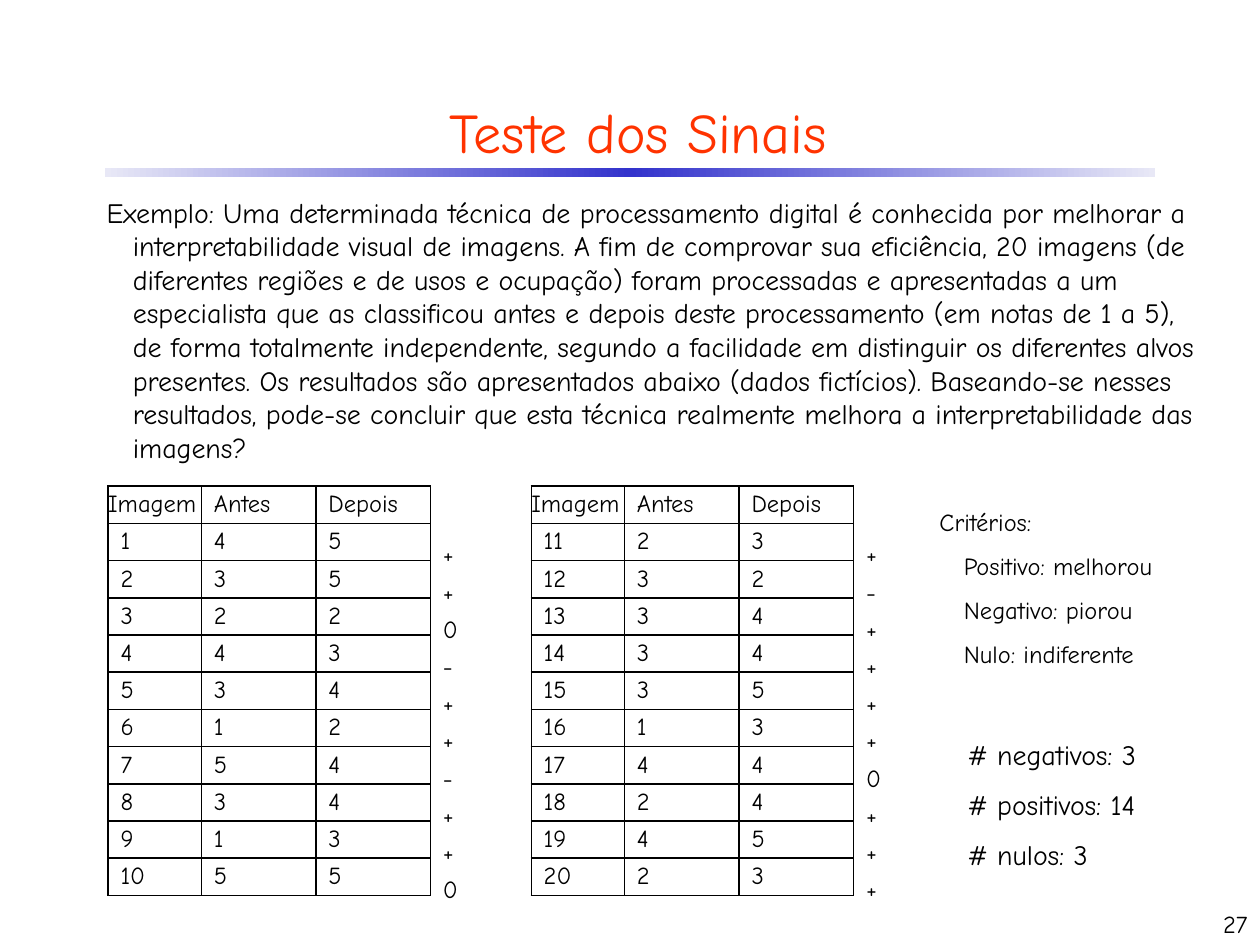
from copy import deepcopy
from dataclasses import dataclass

from lxml.etree import SubElement
from pptx import Presentation
from pptx.dml.color import RGBColor
from pptx.enum.shapes import MSO_SHAPE
from pptx.enum.text import MSO_ANCHOR, PP_ALIGN
from pptx.oxml.ns import qn
from pptx.util import Cm, Pt

FONT = "Comic Neue"
BLACK, WHITE, RED = "000000", "FFFFFF", "FF3300"
PALE, BLUE = "E8E8F6", "3333CC"
PLAIN = "{2D5ABB26-0587-4C30-8999-92F81FD0307C}"
TOP, ROW = 9.8, 0.75
COLS = (1.88, 2.31, 2.31, 1.04)
HEAD = ("Imagem", "Antes", "Depois")
HANG = 0.53


@dataclass
class Line:
    text: str
    left: float = 0
    hang: float = 0


@dataclass
class Note:
    box: tuple
    lines: list
    size: int
    color: str = BLACK
    align: PP_ALIGN = PP_ALIGN.LEFT
    anchor: MSO_ANCHOR = MSO_ANCHOR.TOP
    space: float = 1


@dataclass
class Group:
    left: float
    first: int
    before: str
    after: str
    signs: str


NOTES = [
    Note((0.84, 1.7, 24.05, 1.9), [Line("Teste dos Sinais")], 32, RED,
         PP_ALIGN.CENTER, MSO_ANCHOR.MIDDLE),
    Note((1.9, 3.81, 22.56, 5.74), [Line(
        "Exemplo: Uma determinada técnica de processamento digital é conhecida "
        "por melhorar a interpretabilidade visual de imagens. A fim de comprovar "
        "sua eficiência, 20 imagens (de diferentes regiões e de usos e ocupação) "
        "foram processadas e apresentadas a um especialista que as classificou "
        "antes e depois deste processamento (em notas de 1 a 5), de forma "
        "totalmente independente, segundo a facilidade em distinguir os "
        "diferentes alvos presentes. Os resultados são apresentados abaixo "
        "(dados fictícios). Baseando-se nesses resultados, pode-se concluir que "
        "esta técnica realmente melhora a interpretabilidade das imagens?",
        HANG, HANG)], 16),
    Note((19.25, 14.4, 5.77, 3.33),
         [Line(text, HANG, HANG) for text in
          ("# negativos: 3", "# positivos: 14", "# nulos: 3")], 16, space=1.5),
    Note((18.69, 9.8, 5.77, 3.86),
         [Line("Critérios:", HANG, HANG)] +
         [Line(text, 1.02, HANG) for text in
          ("Positivo: melhorou", "Negativo: piorou", "Nulo: indiferente")],
         14, space=1.5),
    Note((20.12, 17.78, 5.28, 1.27), [Line("27")], 14,
         align=PP_ALIGN.RIGHT, anchor=MSO_ANCHOR.BOTTOM),
]

GROUPS = [
    Group(2.18, 1, "4324315315", "5523424435", "++0-++-++0"),
    Group(10.71, 11, "2333314242", "3244534453", "+-++++0+++"),
]


def paint(color: str) -> RGBColor:
    return RGBColor.from_string(color)


def write(para, text: str, size: int, color: str = BLACK) -> None:
    run = para.add_run()
    run.text = text
    run.font.name = FONT
    run.font.size = Pt(size)
    run.font.color.rgb = paint(color)


def draw_note(slide, note: Note) -> None:
    frame = slide.shapes.add_textbox(*map(Cm, note.box)).text_frame
    frame.word_wrap = True
    frame.vertical_anchor = note.anchor
    for i, line in enumerate(note.lines):
        para = frame.add_paragraph() if i else frame.paragraphs[0]
        para.alignment = note.align
        para.line_spacing = note.space
        props = para._p.get_or_add_pPr()
        props.set("marL", str(Cm(line.left)))
        props.set("indent", str(-Cm(line.hang)))
        write(para, line.text, note.size, note.color)


def draw_bar(slide) -> None:
    bar = slide.shapes.add_shape(MSO_SHAPE.RECTANGLE, Cm(2.12), Cm(3.38), Cm(21.17), Cm(0.2))
    bar.shadow.inherit = False
    bar.line.fill.background()
    bar.fill.gradient()
    bar.fill.gradient_angle = 0
    stops = bar.fill._fill._gradFill.gsLst
    stops.append(deepcopy(stops[-1]))
    for stop, color, place in zip(bar.fill.gradient_stops, (PALE, BLUE, PALE), (0, 0.5, 1)):
        stop.color.rgb = paint(color)
        stop.position = place


def edge(cell, sides: str) -> None:
    props = cell._tc.get_or_add_tcPr()
    for side in sides:
        line = SubElement(props, qn(f"a:ln{side}"), w=str(Pt(1)))
        fill = SubElement(line, qn("a:solidFill"))
        SubElement(fill, qn("a:srgbClr"), val=BLACK)


def fill_cell(cell, text: str) -> None:
    side = 0 if text == HEAD[0] else 0.25
    cell.margin_left = cell.margin_right = Cm(side)
    cell.margin_top = cell.margin_bottom = 0
    cell.vertical_anchor = MSO_ANCHOR.MIDDLE
    para = cell.text_frame.paragraphs[0]
    if text:
        para.space_before = Pt(2.8)
        write(para, text, 14)
    else:
        SubElement(para._p, qn("a:endParaRPr"), sz="1400")


def draw_table(slide, left: float, cols: tuple, rows: list, grid: bool) -> None:
    frame = slide.shapes.add_table(len(rows), len(cols), Cm(left), Cm(TOP),
                                   Cm(sum(cols)), Cm(ROW * len(rows)))
    table = frame.table
    table.first_row = table.horz_banding = False
    table._tbl.tblPr[0].text = PLAIN
    for col, width in zip(table.columns, cols):
        col.width = Cm(width)
    for row, texts in zip(table.rows, rows):
        row.height = Cm(ROW)
        for cell, text in zip(row.cells, texts):
            fill_cell(cell, text)
            if grid:
                edge(cell, "LRTB" if text else "L")
                cell.fill.solid()
                cell.fill.fore_color.rgb = paint(WHITE)
            else:
                cell.fill.background()


def draw_group(slide, group: Group) -> None:
    marks = zip(group.before, group.after)
    rows = [(*HEAD, "")] + [(str(i), a, b, "") for i, (a, b) in enumerate(marks, group.first)]
    draw_table(slide, group.left, COLS, rows, True)
    draw_table(slide, group.left + sum(COLS[:3]), COLS[3:], ["", *group.signs], False)


def main() -> None:
    deck = Presentation()
    deck.slide_width, deck.slide_height = Cm(25.4), Cm(19.05)
    slide = deck.slides.add_slide(deck.slide_layouts[6])
    draw_bar(slide)
    for group in GROUPS:
        draw_group(slide, group)
    for note in NOTES:
        draw_note(slide, note)
    deck.save("out.pptx")


if __name__ == "__main__":
    main()
